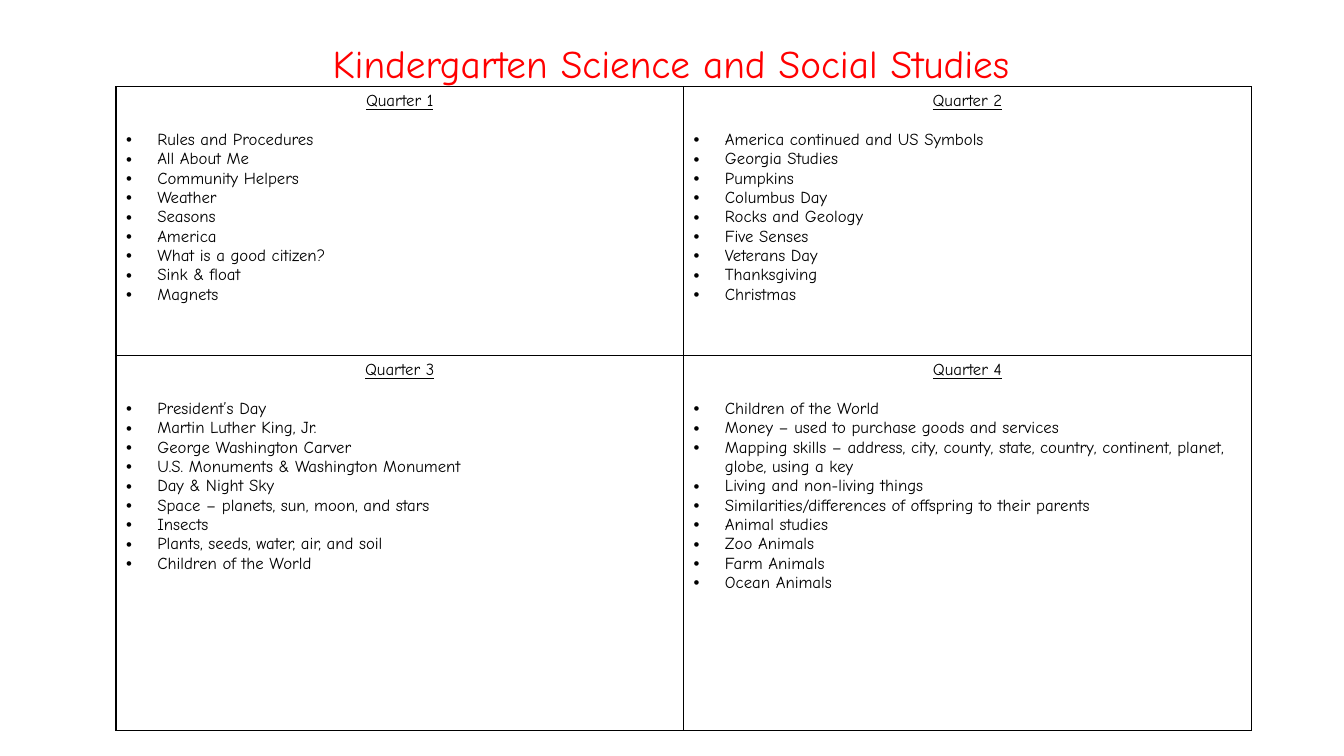
import pptx
import pptx.dml.color
import pptx.enum.text
import pptx.oxml
import pptx.oxml.ns
import pptx.util

RED = pptx.dml.color.RGBColor(0xFF, 0x00, 0x00)
BLACK = pptx.dml.color.RGBColor(0x00, 0x00, 0x00)
FONT = "Comic Neue"
CENTER = pptx.enum.text.PP_ALIGN.CENTER
LEFT = pptx.enum.text.PP_ALIGN.LEFT

PAGE_WIDTH = pptx.util.Inches(13.33)
PAGE_HEIGHT = pptx.util.Inches(7.5)
TABLE_LEFT, TABLE_TOP = pptx.util.Inches(1.15), pptx.util.Inches(0.86)
COLUMN_WIDTH = pptx.util.Inches(5.63)
ROW_HEIGHTS = [pptx.util.Inches(2.67), pptx.util.Inches(3.72)]
BULLET_INDENT = pptx.util.Inches(0.31)
BORDER_WIDTH = pptx.util.Pt(1)

TITLE_FORMAT = {"name": FONT, "size": pptx.util.Pt(28)}
HEADING_FORMAT = {"name": FONT, "size": pptx.util.Pt(12), "underline": True}
TOPIC_FORMAT = {"name": FONT, "size": pptx.util.Pt(12), "underline": False}

QUARTERS = [
    ["Rules and Procedures", "All About Me", "Community Helpers", "Weather",
     "Seasons", "America", "What is a good citizen?", "Sink & float", "Magnets"],
    ["America continued and US Symbols", "Georgia Studies", "Pumpkins",
     "Columbus Day", "Rocks and Geology", "Five Senses", "Veterans Day",
     "Thanksgiving", "Christmas"],
    ["President’s Day", "Martin Luther King, Jr.", "George Washington Carver",
     "U.S. Monuments & Washington Monument", "Day & Night Sky",
     "Space – planets, sun, moon, and stars", "Insects",
     "Plants, seeds, water, air, and soil", "Children of the World"],
    ["Children of the World", "Money – used to purchase goods and services",
     "Mapping skills – address, city, county, state, country, continent, "
     "planet, globe, using a key",
     "Living and non-living things",
     "Similarities/differences of offspring to their parents",
     "Animal studies", "Zoo Animals", "Farm Animals", "Ocean Animals"],
]


def write(para, text, font_format, color, alignment):
    para.alignment = alignment
    span = para.add_run()
    span.text = text
    for name, value in font_format.items():
        setattr(span.font, name, value)
    span.font.color.rgb = color


def add_bullet(para):
    properties = para._p.get_or_add_pPr()
    properties.set("marL", str(BULLET_INDENT))
    properties.set("indent", str(-BULLET_INDENT))
    namespace = pptx.oxml.ns.nsdecls("a")
    for markup in (f'<a:buFont {namespace} typeface="Arial"/>',
                   f'<a:buChar {namespace} char="•"/>'):
        properties.append(pptx.oxml.parse_xml(markup))


def add_borders(cell):
    properties = cell._tc.get_or_add_tcPr()
    for position, side in enumerate(("lnL", "lnR", "lnT", "lnB")):
        properties.insert(position, pptx.oxml.parse_xml(
            f'<a:{side} {pptx.oxml.ns.nsdecls("a")} w="{BORDER_WIDTH}">'
            f'<a:solidFill><a:srgbClr val="{BLACK}"/></a:solidFill></a:{side}>'))


def add_title(page, text):
    box = page.shapes.add_textbox(
        int(PAGE_WIDTH * 0.076), int(PAGE_HEIGHT * -0.012),
        int(PAGE_WIDTH * 0.856), int(PAGE_HEIGHT * 0.197))
    frame = box.text_frame
    frame.word_wrap = True
    frame.vertical_anchor = pptx.enum.text.MSO_ANCHOR.MIDDLE
    para = frame.paragraphs[0]
    para.line_spacing = 0.9
    write(para, text, TITLE_FORMAT, RED, CENTER)


def fill_quarter(cell, heading, topics):
    cell.fill.background()
    add_borders(cell)
    frame = cell.text_frame
    first = frame.paragraphs[0]
    first.space_after = pptx.util.Pt(13.8)
    write(first, heading, HEADING_FORMAT, BLACK, CENTER)
    for topic in topics:
        para = frame.add_paragraph()
        write(para, topic, TOPIC_FORMAT, BLACK, LEFT)
        add_bullet(para)


def add_quarters(page, quarters):
    """Lay the quarters out in a two-column table, row by row."""
    table = page.shapes.add_table(
        2, 2, TABLE_LEFT, TABLE_TOP, 2 * COLUMN_WIDTH, sum(ROW_HEIGHTS)).table
    table.first_row = False
    table.horz_banding = False
    for column in table.columns:
        column.width = COLUMN_WIDTH
    for row, height in zip(table.rows, ROW_HEIGHTS):
        row.height = height
    for index, topics in enumerate(quarters):
        fill_quarter(table.cell(*divmod(index, 2)), f"Quarter {index + 1}", topics)


def main():
    deck = pptx.Presentation()
    deck.slide_width, deck.slide_height = PAGE_WIDTH, PAGE_HEIGHT
    page = deck.slides.add_slide(deck.slide_layouts[6])
    add_title(page, "Kindergarten Science and Social Studies ")
    add_quarters(page, QUARTERS)
    deck.save("out.pptx")


if __name__ == "__main__":
    main()
